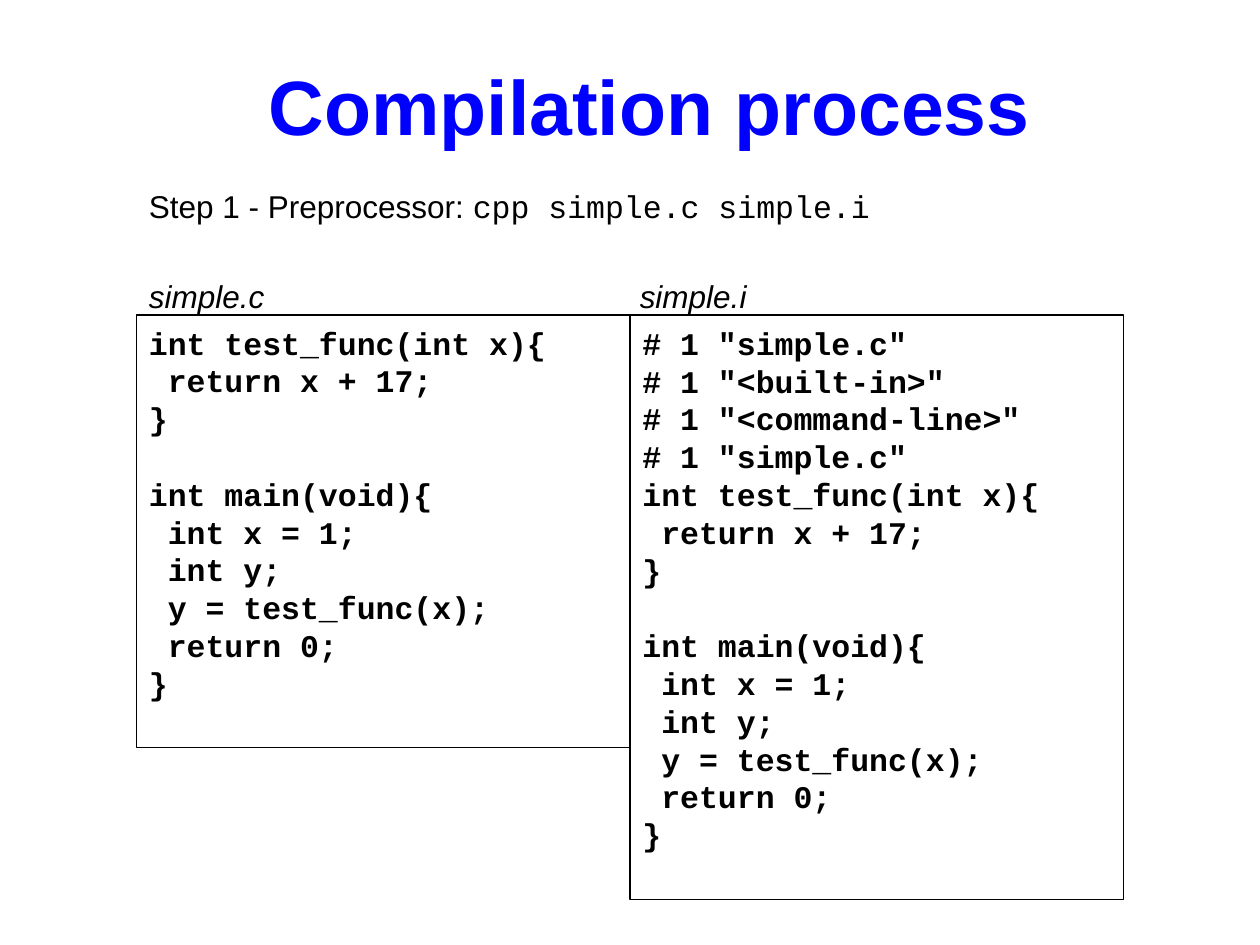
from pptx import Presentation
from pptx.dml.color import RGBColor
from pptx.enum import shapes, text
from pptx.oxml import parse_xml
from pptx.oxml.ns import nsdecls
from pptx.util import Pt

HUES = {"title": "0000FF", "ink": "000000", "paper": "FFFFFF"}
SANS, MONO = "Arial", "Courier New"
PITCH = 21.6  # code line height

CODE = [
    "int test_func(int x){",
    " return x + 17;",
    "}",
    "",
    "int main(void){",
    " int x = 1;",
    " int y;",
    " y = test_func(x);",
    " return 0;",
    "}",
]
MARKS = [
    '# 1 "simple.c"',
    '# 1 "<built-in>"',
    '# 1 "<command-line>"',
    '# 1 "simple.c"',
]


def hue(name):
    return RGBColor.from_string(HUES[name])


def add_run(para, words, font=SANS, size=18, color="ink", bold=False, italic=False):
    run = para.add_run()
    run.text = words
    run.font.name = font
    run.font.size = Pt(size)
    run.font.bold = bold
    run.font.italic = italic
    run.font.color.rgb = hue(color)


def set_frame(shape, wrap=True, top=5):
    frame = shape.text_frame
    frame.word_wrap = wrap
    frame.vertical_anchor = text.MSO_ANCHOR.TOP
    frame.margin_top = Pt(top)
    return frame


def add_title(slide, left, top, width, height):
    box = slide.shapes.add_textbox(Pt(left), Pt(top), Pt(width), Pt(height))
    para = set_frame(box, wrap=False, top=3.6).paragraphs[0]
    para.alignment = text.PP_ALIGN.LEFT
    add_run(para, "Compilation process", size=44, color="title", bold=True)


def add_intro(slide, left, top, width, height, step):
    box = slide.shapes.add_textbox(Pt(left), Pt(top), Pt(width), Pt(height))
    box.fill.solid()
    box.fill.fore_color.rgb = hue("paper")
    frame = set_frame(box)

    # Step and command
    para = frame.paragraphs[0]
    add_run(para, "Step 1 - Preprocessor: ")
    add_run(para, "cpp simple.c simple.i", font=MONO)

    # File names, the second one at a tab above its panel
    para = frame.add_paragraph()
    para.space_before = Pt(29.6)
    add_run(para, "simple.c\tsimple.i", italic=True)
    props = para._p.get_or_add_pPr()
    props.append(parse_xml(
        f'<a:tabLst {nsdecls("a")}><a:tab pos="{Pt(step)}" algn="l"/></a:tabLst>'))


def add_panel(slide, left, top, width, height, lines):
    box = slide.shapes.add_shape(
        shapes.MSO_SHAPE.RECTANGLE, Pt(left), Pt(top), Pt(width), Pt(height))
    box.shadow.inherit = False
    box.fill.background()
    box.line.color.rgb = hue("ink")
    box.line.width = Pt(0.75)
    frame = set_frame(box)
    para, gap = frame.paragraphs[0], 0
    for num, line in enumerate(lines):
        if not line:
            gap = PITCH
            continue
        if num:
            para = frame.add_paragraph()
        para.alignment = text.PP_ALIGN.LEFT
        para.line_spacing = Pt(PITCH)
        para.space_before = Pt(gap)
        add_run(para, line, font=MONO, bold=True)
        gap = 0


def main():
    deck = Presentation()
    deck.slide_width, deck.slide_height = Pt(720), Pt(540)
    slide = deck.slides.add_slide(deck.slide_layouts[6])

    left, top, width = 78, 180, 282
    add_intro(slide, left, 102, 600, 426, width - 1.5)
    add_title(slide, 146.5, 30, 456, 60)
    add_panel(slide, left + width, top, width, 334, MARKS + CODE)
    add_panel(slide, left, top, width, 247, CODE)
    deck.save("out.pptx")


if __name__ == "__main__":
    main()
